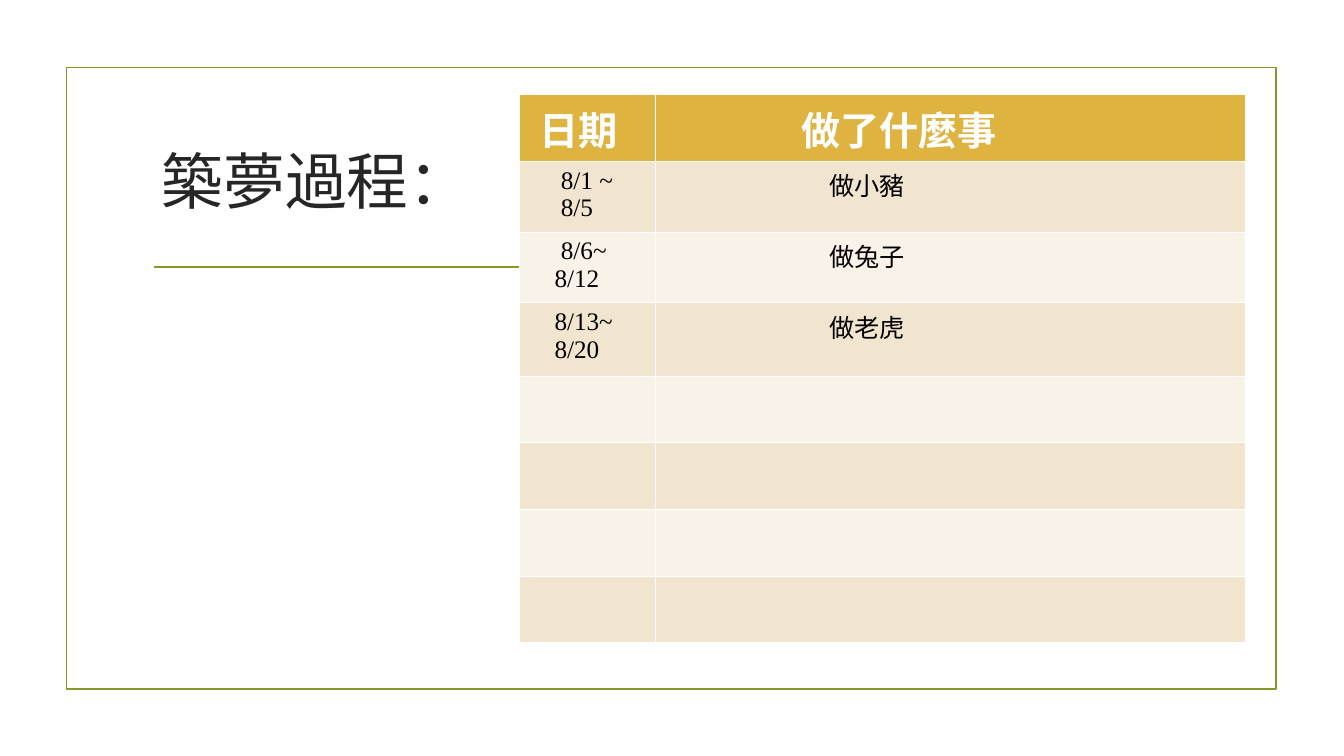
from lxml import etree
from pptx import Presentation
from pptx.dml.color import RGBColor
from pptx.enum.shapes import MSO_CONNECTOR, MSO_SHAPE
from pptx.enum.text import MSO_ANCHOR, PP_ALIGN
from pptx.oxml.ns import qn
from pptx.util import Cm, Pt

RECTANGLE = MSO_SHAPE.RECTANGLE
STRAIGHT = MSO_CONNECTOR.STRAIGHT
MIDDLE = MSO_ANCHOR.MIDDLE
CENTER = PP_ALIGN.CENTER

CHINESE_FONT = "Noto Sans CJK TC"
DATE_FONT = "Times New Roman"
GREEN, GOLD, SAND, CREAM = "83992A", "DEB340", "F2E5CF", "F9F2E8"
WHITE, BLACK, CHARCOAL = "FFFFFF", "000000", "262626"

COLUMN_WIDTHS = [3.43, 14.88]
ROW_HEIGHTS = [1.68, 1.68, 1.68, 1.85, 1.68, 1.68, 1.68, 1.68]
# Each date line carries its own indent in centimetres.
DIARY = [
    ([("8/1 ~", 0.79), ("8/5", 0.79)], "做小豬"),
    ([("8/6~", 0.79), ("8/12", 0.63)], "做兔子"),
    ([("8/13~", 0.63), ("8/20", 0.63)], "做老虎"),
]
ACTIVITY_INDENT = 4.12


def color(hex_string):
    return RGBColor.from_string(hex_string)


def style_paragraph(paragraph, font_name, size, hex_color, bold=False):
    font = paragraph.font
    font.name = font_name
    font.size = Pt(size)
    font.bold = bold
    font.color.rgb = color(hex_color)
    properties = paragraph._p.pPr.find(qn("a:defRPr"))
    east_asian = etree.SubElement(properties, qn("a:ea"))
    east_asian.set("typeface", CHINESE_FONT)


def outline(shape):
    shape.line.color.rgb = color(GREEN)
    shape.line.width = Pt(1.25)


def add_frame(slide):
    frame = slide.shapes.add_shape(RECTANGLE, Cm(1.68), Cm(1.7), Cm(30.48), Cm(15.67))
    frame.shadow.inherit = False
    frame.fill.background()
    outline(frame)


def add_title_rule(slide):
    rule = slide.shapes.add_connector(STRAIGHT, Cm(3.89), Cm(6.73), Cm(30), Cm(6.73))
    etree.SubElement(rule._element.spPr, qn("a:effectLst"))
    outline(rule)


def add_title(slide, text):
    title = slide.shapes.add_textbox(Cm(3.61), Cm(2.72), Cm(8.71), Cm(3.63))
    title.text_frame.word_wrap = True
    title.text_frame.vertical_anchor = MIDDLE
    paragraph = title.text_frame.paragraphs[0]
    paragraph.text = text
    paragraph.alignment = CENTER
    style_paragraph(paragraph, CHINESE_FONT, 44, CHARCOAL)


def write_cell(cell, lines, font_name, size=18, hex_color=BLACK, bold=False):
    """Write (text, indent in cm) pairs, one paragraph each."""
    cell.text = "\n".join(text for text, _ in lines)
    for paragraph, (_, indent) in zip(cell.text_frame.paragraphs, lines):
        properties = paragraph._p.get_or_add_pPr()
        properties.set("marL", str(Cm(indent)))
        properties.set("indent", "0")
        style_paragraph(paragraph, font_name, size, hex_color, bold)


def add_diary_table(slide):
    table = slide.shapes.add_table(
        len(ROW_HEIGHTS), len(COLUMN_WIDTHS), Cm(13.09), Cm(2.39),
        Cm(sum(COLUMN_WIDTHS)), Cm(sum(ROW_HEIGHTS))).table
    for column, width in zip(table.columns, COLUMN_WIDTHS):
        column.width = Cm(width)
    for index, (row, height) in enumerate(zip(table.rows, ROW_HEIGHTS)):
        row.height = Cm(height)
        for cell in row.cells:
            cell.fill.solid()
            band = SAND if index % 2 else CREAM
            cell.fill.fore_color.rgb = color(band if index else GOLD)

    for column, heading in enumerate([("日期", 0.25), ("做了什麼事", 3.42)]):
        write_cell(table.cell(0, column), [heading], CHINESE_FONT, 28, WHITE, True)
    for row, (dates, activity) in enumerate(DIARY, start=1):
        write_cell(table.cell(row, 0), dates, DATE_FONT)
        write_cell(table.cell(row, 1), [(activity, ACTIVITY_INDENT)], CHINESE_FONT)


def main():
    presentation = Presentation()
    presentation.slide_width = Cm(33.87)
    presentation.slide_height = Cm(19.05)
    slide = presentation.slides.add_slide(presentation.slide_layouts[6])
    add_frame(slide)
    add_title_rule(slide)
    add_title(slide, "築夢過程：")
    add_diary_table(slide)
    presentation.save("out.pptx")


if __name__ == "__main__":
    main()
